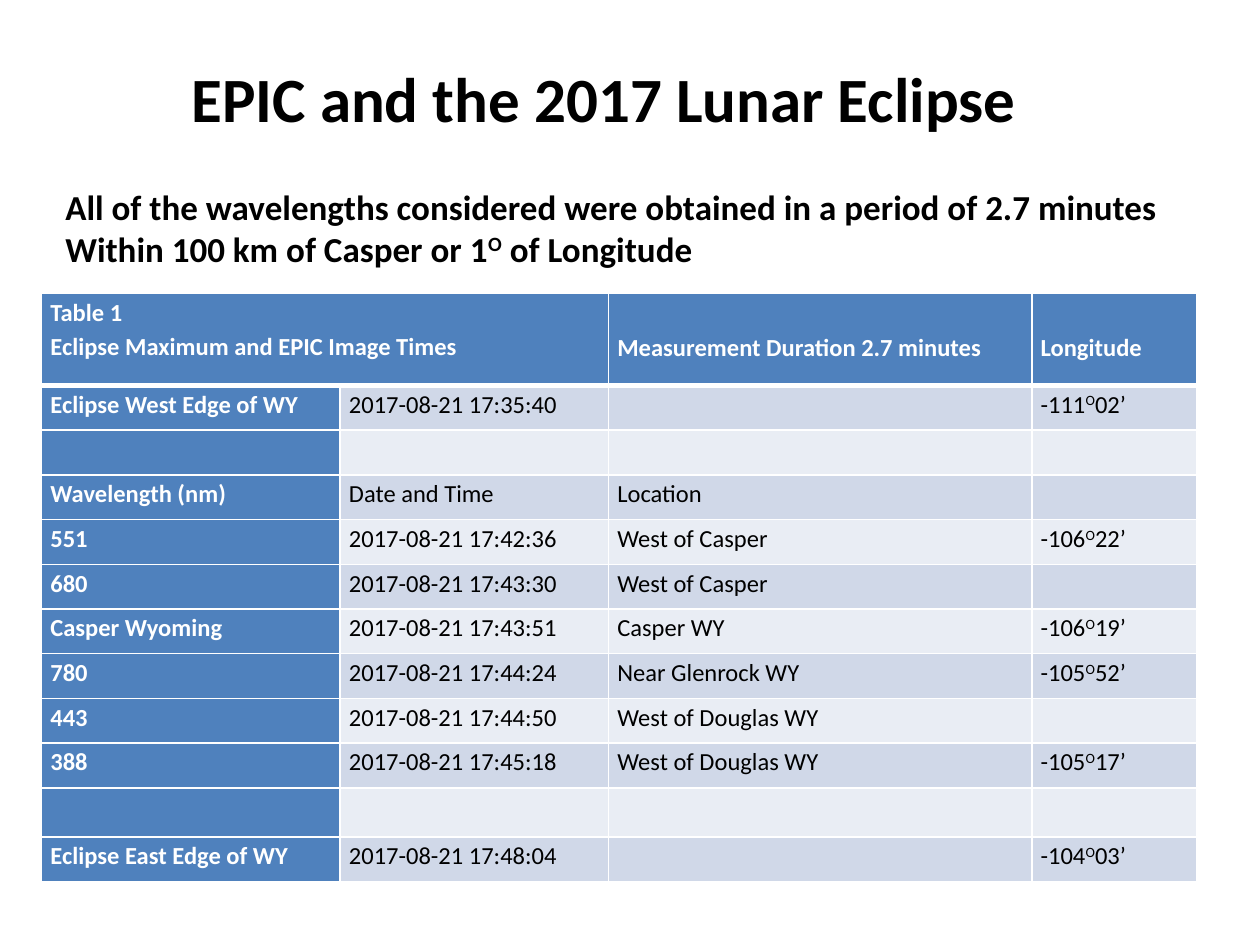
from dataclasses import dataclass

from lxml import etree
from pptx import Presentation
from pptx.dml.color import RGBColor
from pptx.enum.text import MSO_ANCHOR, MSO_AUTO_SIZE, PP_ALIGN
from pptx.oxml.ns import qn
from pptx.util import Inches, Pt

LEFT = PP_ALIGN.LEFT
TOP = MSO_ANCHOR.TOP
FIT_SHAPE = MSO_AUTO_SIZE.SHAPE_TO_FIT_TEXT
TITLE_ONLY = 5


@dataclass(frozen=True)
class Theme:
    font: str = "Calibri"
    ink: str = "000000"
    light: str = "FFFFFF"
    heading: str = "4F81BD"
    bands: tuple = ("D0D8E8", "E9EDF4")
    title_size: int = 36
    statement_size: int = 20
    table_size: int = 14
    rule: int = 1
    header_rule: int = 3


def write(frame, text, *, font, size, color, bold=False, line_spacing=None):
    """Fill a frame, one paragraph a line; text between ^ marks is superscript."""
    for index, line in enumerate(text.split("\n")):
        paragraph = frame.paragraphs[0] if index == 0 else frame.add_paragraph()
        paragraph.alignment = LEFT
        paragraph.line_spacing = line_spacing
        for position, part in enumerate(line.split("^")):
            run = paragraph.add_run()
            run.text = part
            run.font.name = font
            run.font.size = Pt(size)
            run.font.bold = bold
            run.font.color.rgb = RGBColor.from_string(color)
            if position % 2:
                run.font._element.set("baseline", "30000")


def add_cell_border(cell, side, color, width):
    """Draw one side, L, R, T or B; call before the cell is filled."""
    properties = cell._tc.get_or_add_tcPr()
    line = etree.SubElement(properties, qn(f"a:ln{side}"), w=str(Pt(width)))
    fill = etree.SubElement(line, qn("a:solidFill"))
    etree.SubElement(fill, qn("a:srgbClr"), val=color)


class SlideBuilder:
    def __init__(self, slide, theme):
        self.slide = slide
        self.theme = theme

    def place_text(self, shape, box, text, size):
        shape.left, shape.top, shape.width, shape.height = map(Inches, box)
        frame = shape.text_frame
        frame.word_wrap = False
        frame.auto_size = FIT_SHAPE
        frame.vertical_anchor = TOP
        write(frame, text, font=self.theme.font, size=size,
              color=self.theme.ink, bold=True)

    def title(self, box, text):
        self.place_text(self.slide.shapes.title, box, text, self.theme.title_size)

    def statement(self, box, text):
        shape = self.slide.shapes.add_textbox(*map(Inches, box))
        self.place_text(shape, box, text, self.theme.statement_size)

    def table(self, box, rows, widths, heights):
        frame = self.slide.shapes.add_table(
            len(rows), len(widths), *map(Inches, box))
        table = frame.table
        table.first_col = True
        for column, width in zip(table.columns, widths):
            column.width = Inches(width)
        for row, height in zip(table.rows, heights):
            row.height = Inches(height)
        for row_index, row in enumerate(rows):
            for column_index, text in enumerate(row):
                self.table_cell(table.cell(row_index, column_index), text,
                                row_index, column_index)
        return table

    def table_cell(self, cell, text, row_index, column_index):
        theme = self.theme
        is_heading = row_index == 0 or column_index == 0
        cell.margin_left = cell.margin_right = Inches(0.07)
        cell.margin_top = cell.margin_bottom = 0
        rules = {"L": theme.rule, "R": theme.rule,
                 "T": theme.header_rule if row_index == 1 else theme.rule,
                 "B": theme.header_rule if row_index == 0 else theme.rule}
        for side, width in rules.items():
            add_cell_border(cell, side, theme.light, width)
        cell.fill.solid()
        cell.fill.fore_color.rgb = RGBColor.from_string(
            theme.heading if is_heading else theme.bands[(row_index - 1) % 2])
        if text:
            write(cell.text_frame, text, font=theme.font, size=theme.table_size,
                  color=theme.light if is_heading else theme.ink,
                  bold=is_heading, line_spacing=1.15)


ECLIPSE_TIMES = [
    ("Table 1\nEclipse Maximum and EPIC Image Times", "",
     "Measurement Duration 2.7 minutes", "Longitude"),
    ("Eclipse West Edge of WY", "2017-08-21 17:35:40", "", "-111^O^02’"),
    ("", "", "", ""),
    ("Wavelength (nm)", "Date and Time", "Location", ""),
    ("551", "2017-08-21 17:42:36", "West of Casper", "-106^O^22’"),
    ("680", "2017-08-21 17:43:30", "West of Casper", ""),
    ("Casper Wyoming", "2017-08-21 17:43:51", "Casper WY", "-106^O^19’"),
    ("780", "2017-08-21 17:44:24", "Near Glenrock WY", "-105^O^52’"),
    ("443", "2017-08-21 17:44:50", "West of Douglas WY", ""),
    ("388", "2017-08-21 17:45:18", "West of Douglas WY", "-105^O^17’"),
    ("", "", "", ""),
    ("Eclipse East Edge of WY", "2017-08-21 17:48:04", "", "-104^O^03’"),
]


def main():
    presentation = Presentation()
    presentation.slide_width = Inches(10)
    presentation.slide_height = Inches(7.5)
    slide = presentation.slides.add_slide(presentation.slide_layouts[TITLE_ONLY])
    builder = SlideBuilder(slide, Theme())

    table_height, header_height, gap_height = 4.67, 0.73, 0.39
    row_height = (table_height - header_height - gap_height) / 10
    heights = [header_height] + [row_height] * 9 + [gap_height, row_height]
    table = builder.table((0.33, 2.33, 9.17, table_height), ECLIPSE_TIMES,
                          (2.37, 2.13, 3.36, 1.31), heights)
    table.cell(0, 0).merge(table.cell(0, 1))
    for column_index in (2, 3):  # level with the second line of the first header
        table.cell(0, column_index).margin_top = Inches(0.28)

    builder.statement(
        (0.42, 1.42, 8.94, 0.77),
        "All of the wavelengths considered were obtained in a period of 2.7 minutes\n"
        "Within 100 km of Casper or 1^O^ of Longitude")
    builder.title((1.42, 0.42, 6.81, 0.71), "EPIC and the 2017 Lunar Eclipse")
    presentation.save("out.pptx")


if __name__ == "__main__":
    main()
